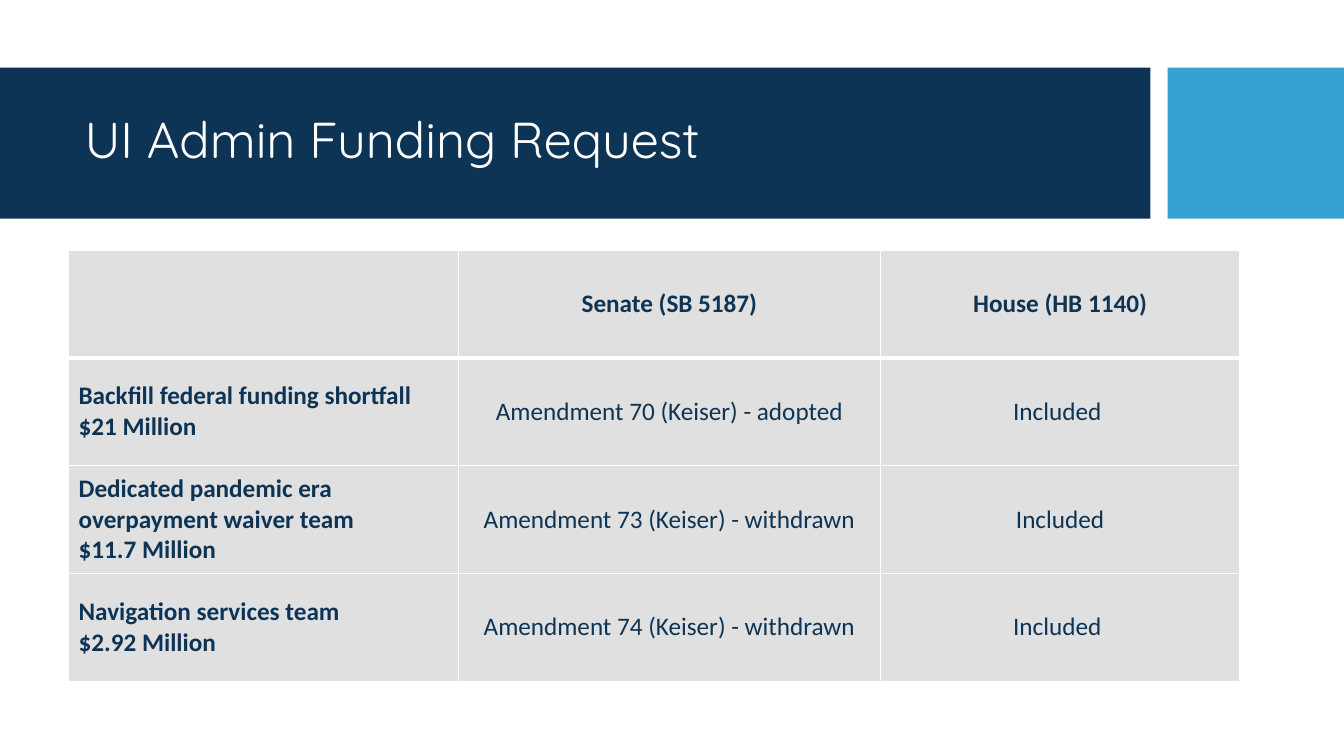
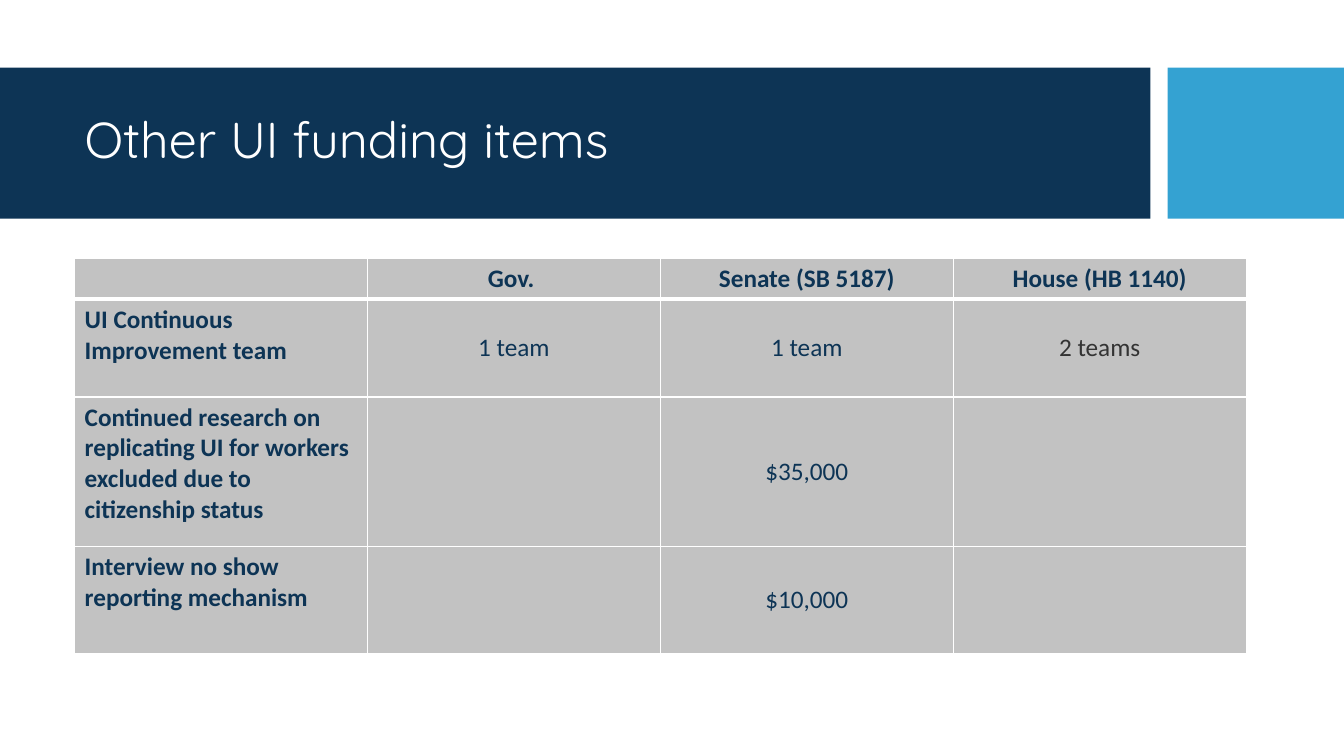
from pptx import Presentation
from pptx import util as u
from pptx.dml.color import RGBColor
from pptx.enum import shapes, text
from pptx.oxml import parse_xml
from pptx.oxml.ns import nsdecls

NAVY = RGBColor(0x0D, 0x34, 0x55)
SKY = RGBColor(0x34, 0xA2, 0xD2)
WHITE = RGBColor(0xFF, 0xFF, 0xFF)
LIGHT_GREY = RGBColor(0xE0, 0xE0, 0xE0)
MID_GREY = RGBColor(0xC2, 0xC2, 0xC2)
CHARCOAL = RGBColor(0x33, 0x33, 0x33)
TOP = text.MSO_ANCHOR.TOP
MIDDLE = text.MSO_ANCHOR.MIDDLE


class Deck:
    title_font = "Quicksand"
    body_font = "Calibri"
    title_size = 36
    body_size = 18
    thin, thick = 1, 3

    def __init__(self):
        self.prs = Presentation()
        self.prs.slide_width = u.Inches(13.33)
        self.prs.slide_height = u.Inches(7.5)
        self.slide = None

    def new_slide(self, title):
        self.slide = self.prs.slides.add_slide(self.prs.slide_layouts[6])
        self.band(0, 11.41, NAVY)
        self.band(11.58, 1.75, SKY)
        self.title(title)

    def band(self, left, width, color):
        band = self.slide.shapes.add_shape(
            shapes.MSO_SHAPE.RECTANGLE,
            u.Inches(left), u.Inches(0.67), u.Inches(width), u.Inches(1.5))
        band.shadow.inherit = False
        band.fill.solid()
        band.fill.fore_color.rgb = color
        band.line.fill.background()

    def title(self, wording):
        frame = self.slide.shapes.add_textbox(
            u.Inches(0.74), u.Inches(0.82), u.Inches(10.51), u.Inches(1.18)).text_frame
        frame.word_wrap = True
        frame.vertical_anchor = MIDDLE
        paragraph = frame.paragraphs[0]
        paragraph.line_spacing = 0.9
        self.run(paragraph, wording, self.title_font, self.title_size, WHITE)

    def run(self, paragraph, wording, font, size, color, bold=False):
        run = paragraph.add_run()
        run.text = wording
        run.font.name = font
        run.font.size = u.Pt(size)
        run.font.color.rgb = color
        run.font.bold = bold

    def borders(self, cell, row):
        top = self.thick if row == 1 else self.thin
        bottom = self.thick if row == 0 else self.thin
        sides = {"lnL": self.thin, "lnR": self.thin, "lnT": top, "lnB": bottom}
        for side, points in sides.items():
            cell._tc.get_or_add_tcPr().append(parse_xml(
                f'<a:{side} {nsdecls("a")} w="{u.Pt(points)}"><a:solidFill>'
                f'<a:srgbClr val="{WHITE}"/></a:solidFill></a:{side}>'))

    def table(self, left, top, widths, heights, rows, fill, heading_anchor, plain=()):
        table = self.slide.shapes.add_table(
            len(rows), len(widths), u.Inches(left), u.Inches(top),
            u.Inches(sum(widths)), u.Inches(sum(heights))).table
        table.horz_banding = False
        for column, width in zip(table.columns, widths):
            column.width = u.Inches(width)
        for row, height in zip(table.rows, heights):
            row.height = u.Inches(height)
        for r, entries in enumerate(rows):
            for c, entry in enumerate(entries):
                cell = table.cell(r, c)
                heading = r == 0 or c == 0
                cell.vertical_anchor = heading_anchor if heading else MIDDLE
                self.borders(cell, r)
                cell.fill.solid()
                cell.fill.fore_color.rgb = fill
                color = CHARCOAL if entry in plain else NAVY
                self.cell_text(cell, entry, color, heading, centred=c > 0)

    def cell_text(self, cell, entry, color, bold, centred):
        frame = cell.text_frame
        for i, line in enumerate(entry.splitlines()):
            paragraph = frame.add_paragraph() if i else frame.paragraphs[0]
            paragraph.alignment = text.PP_ALIGN.CENTER if centred else text.PP_ALIGN.LEFT
            self.run(paragraph, line, self.body_font, self.body_size, color, bold)


def main():
    deck = Deck()

    deck.new_slide("UI Admin Funding Request")
    deck.table(
        0.68, 2.48, [3.87, 4.18, 3.57], [1.07] * 4,
        [["", "Senate (SB 5187)", "House (HB 1140)"],
         ["Backfill federal funding shortfall\n$21 Million",
          "Amendment 70 (Keiser) - adopted", "Included "],
         ["Dedicated pandemic era overpayment waiver team\n$11.7 Million",
          "Amendment 73 (Keiser) - withdrawn", "Included"],
         ["Navigation services team\n$2.92 Million",
          "Amendment 74 (Keiser) - withdrawn", "Included "]],
        LIGHT_GREY, MIDDLE)

    deck.new_slide("Other UI funding items")
    deck.table(
        0.74, 2.56, [11.62 / 4] * 4, [0.41, 0.97, 1.48, 1.07],
        [["", "Gov. ", "Senate (SB 5187)", "House (HB 1140)"],
         ["UI Continuous Improvement team", "1 team", "1 team", "2 teams"],
         ["Continued research on replicating UI for workers excluded due to citizenship status",
          "", "$35,000", ""],
         ["Interview no show reporting mechanism", "", "$10,000", ""]],
        MID_GREY, TOP, plain=("2 teams",))

    deck.prs.save("out.pptx")


if __name__ == "__main__":
    main()
